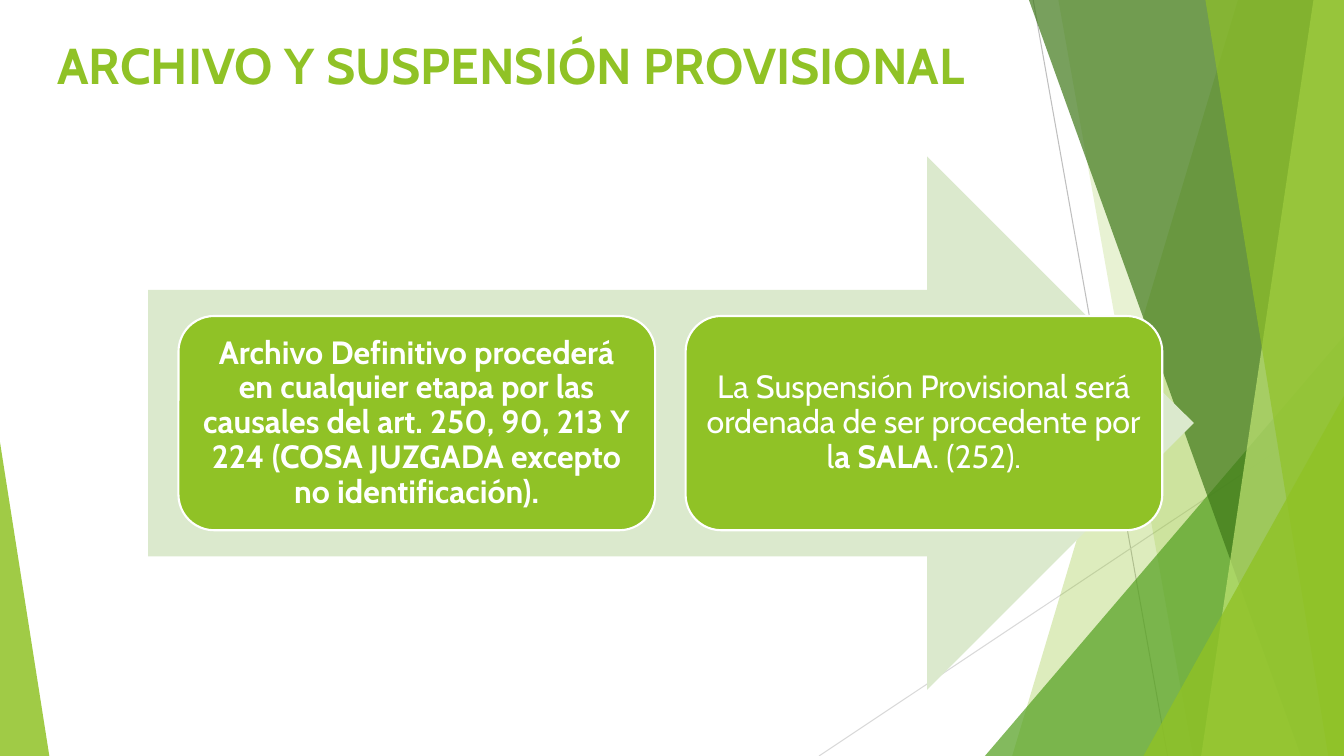
from lxml import etree
from pptx import Presentation, util as u
from pptx.dml.color import RGBColor
from pptx.enum import shapes, text
from pptx.oxml.ns import qn

W, H = 1280, 720
LIME, WHITE = "90C226", "FFFFFF"
KIND = shapes.MSO_SHAPE


def px(n):
    return u.Emu(n * 9525)


def rgb(code):
    return RGBColor.from_string(code)


class Deck:
    font = "Cabin"

    def __init__(self):
        self.prs = Presentation()
        self.prs.slide_width, self.prs.slide_height = px(W), px(H)
        self.slide = self.prs.slides.add_slide(self.prs.slide_layouts[6])
        self.items = self.slide.shapes

    def paint(self, item, color, alpha=100, edge=None):
        item.shadow.inherit = False
        item.fill.solid()
        item.fill.fore_color.rgb = rgb(color)
        if alpha < 100:
            clr = item._element.spPr.find(qn("a:solidFill"))[0]
            etree.SubElement(clr, qn("a:alpha"), val=str(alpha * 1000))
        if edge:
            item.line.color.rgb = rgb(edge)
            item.line.width = u.Pt(1.5)
        else:
            item.line.fill.background()
        return item

    def line(self, x1, y1, x2, y2, color):
        item = self.items.add_connector(
            shapes.MSO_CONNECTOR.STRAIGHT, px(x1), px(y1), px(x2), px(y2))
        item.line.color.rgb = rgb(color)
        item.line.width = u.Pt(0.75)
        etree.SubElement(item._element.spPr, qn("a:effectLst"))

    def shard(self, top, base, color, alpha):
        """Band from a slanted left side to the right slide edge."""
        form = self.items.build_freeform(top, 0, scale=9525.0)
        form.add_line_segments([(W, 0), (W, H), (base, H)], close=True)
        self.paint(form.convert_to_shape(), color, alpha)

    def shape(self, kind, x, y, w, h, color, alpha=100, edge=None, adj=None):
        item = self.items.add_shape(kind, px(x), px(y), px(w), px(h))
        if adj is not None:
            item.adjustments[0] = adj
        return self.paint(item, color, alpha, edge)

    def label(self, item, runs, size, color, align, anchor, space=1.0):
        frame = item.text_frame
        frame.word_wrap = True
        frame.vertical_anchor = anchor
        para = frame.paragraphs[0]
        para.alignment, para.line_spacing = align, space
        for words, bold in runs:
            run = para.add_run()
            run.text = words
            run.font.name, run.font.size = self.font, u.Pt(size)
            run.font.bold = bold
            run.font.color.rgb = rgb(color)

    def title(self, words, x, y, w, h):
        box = self.items.add_textbox(px(x), px(y), px(w), px(h))
        self.label(box, [(words, True)], 36, LIME,
                   text.PP_ALIGN.LEFT, text.MSO_ANCHOR.TOP)

    def card(self, x, y, w, h, runs):
        item = self.shape(KIND.ROUNDED_RECTANGLE, x, y, w, h, LIME, edge=WHITE)
        frame = item.text_frame
        frame.margin_left = frame.margin_right = px(10)
        frame.margin_top = frame.margin_bottom = px(10)
        self.label(item, runs, 23, WHITE,
                   text.PP_ALIGN.CENTER, text.MSO_ANCHOR.MIDDLE, 0.9)


def main():
    deck = Deck()

    # Backdrop: thin lines and translucent shards
    deck.line(984, 0, 1112, H, "BFBFBF")
    deck.line(W, 387, 780, H, "D9D9D9")
    deck.shard(1179, 964, LIME, 30)
    deck.shard(1008, 1136, LIME, 20)
    deck.shape(KIND.ISOSCELES_TRIANGLE, 938, 320, 342, 400, "54A021", 72, adj=1)
    deck.shard(980, 1239, "3F7819", 70)
    deck.shard(1251, 1144, "C0E474", 70)
    deck.shard(1148, 1265, LIME, 65)
    deck.shape(KIND.ISOSCELES_TRIANGLE, 1089, 377, 191, 343, LIME, 80, adj=1)
    deck.shape(KIND.ISOSCELES_TRIANGLE, 0, 421, 47, 299, LIME, 85, adj=0)

    # Title
    deck.title("ARCHIVO Y SUSPENSIÓN PROVISIONAL", 45, 28, 1212, 89)

    # Arrow with its two steps
    deck.shape(KIND.RIGHT_ARROW, 141, 149, 996, 508, "DBE9CD")
    steps = [
        [("Archivo Definitivo procederá en cualquier etapa por las causales "
          "del art. 250, 90, 213 Y 224 (COSA JUZGADA excepto no "
          "identificación).", True)],
        [("La Suspensión Provisional será ordenada de ser procedente por l",
          False), ("a SALA", True), (". (252).", False)],
    ]
    for i, runs in enumerate(steps):
        deck.card(170 + i * 483, 301, 454, 204, runs)

    deck.prs.save("out.pptx")


if __name__ == "__main__":
    main()
